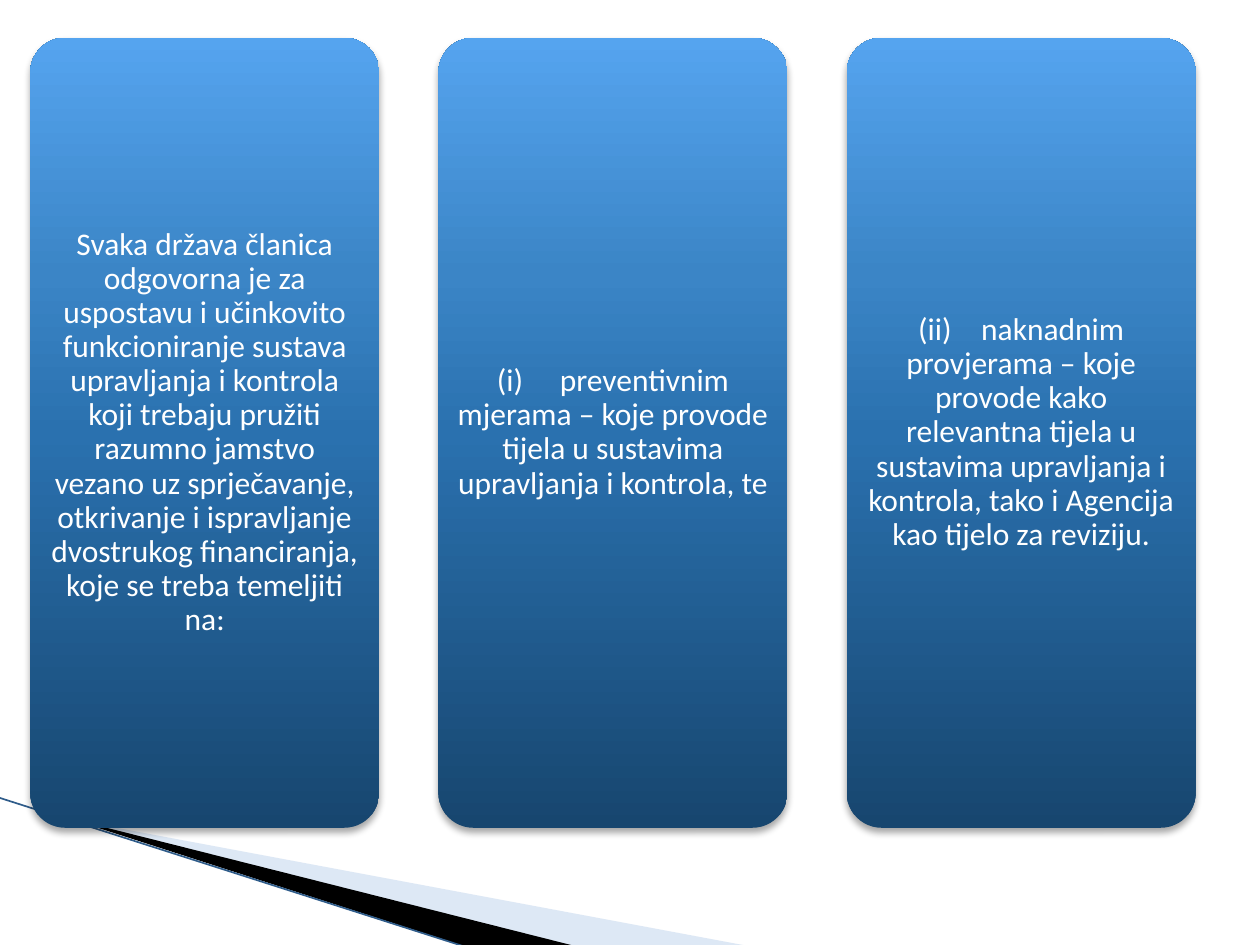
from lxml.etree import SubElement
from pptx import Presentation
from pptx.dml.color import RGBColor
from pptx.enum.shapes import MSO_CONNECTOR, MSO_SHAPE
from pptx.enum.text import MSO_ANCHOR, PP_ALIGN
from pptx.oxml import parse_xml
from pptx.oxml.ns import nsdecls, qn
from pptx.util import Inches, Pt

THEME = {
    "pale": "ABC6E6",
    "pale_alpha": 40,
    "dark": "000000",
    "edge": "2F5C8A",
    "edge_width": Pt(0.95),
    "text": RGBColor.from_string("FFFFFF"),
    "font": "Calibri",
    "size": Pt(18),
    "gradient": [(0, "17466F"), (50, "2A71AF"), (70, "3B85C6"), (100, "55A4EF")],
}
FRAME_FORMAT = {
    "word_wrap": True,
    "vertical_anchor": MSO_ANCHOR.MIDDLE,
    "margin_left": Inches(0.07),
    "margin_right": Inches(0.07),
    "margin_top": Inches(0.07),
    "margin_bottom": Inches(0.07),
}
PARAGRAPH_FORMAT = {"alignment": PP_ALIGN.CENTER, "line_spacing": 0.9}
FONT_FORMAT = {"name": THEME["font"], "size": THEME["size"]}

STATEMENTS = [
    "Svaka država članica odgovorna je za uspostavu i učinkovito funkcioniranje "
    "sustava upravljanja i kontrola koji trebaju pružiti razumno jamstvo vezano uz "
    "sprječavanje, otkrivanje i ispravljanje dvostrukog financiranja, koje se treba "
    "temeljiti na:",
    "(i)\tpreventivnim mjerama – koje provode tijela u sustavima upravljanja i "
    "kontrola, te",
    "(ii)\tnaknadnim provjerama – koje provode kako relevantna tijela u sustavima "
    "upravljanja i kontrola, tako i Agencija kao tijelo za reviziju.",
]
RAYS = [
    (THEME["pale"], THEME["pale_alpha"], [(0.55, 6.5), (5.95, 7.51), (4.56, 7.51)]),
    (THEME["dark"], 100, [(0.53, 6.49), (4.57, 7.51), (3.72, 7.52)]),
]
CARD_LEFT, CARD_TOP, CARD_WIDTH, CARD_HEIGHT = 0.24, 0.3, 2.77, 6.27
CARD_PITCH = 3.24


def apply_format(target, values):
    for name, value in values.items():
        setattr(target, name, value)


presentation = Presentation()
presentation.slide_width = Inches(10)
presentation.slide_height = Inches(7.5)
slide = presentation.slides.add_slide(presentation.slide_layouts[6])

for color, alpha, corners in RAYS:
    points = [(Inches(x), Inches(y)) for x, y in corners]
    builder = slide.shapes.build_freeform(*points[0])
    builder.add_line_segments(points[1:], close=True)
    ray = builder.convert_to_shape()
    ray.shadow.inherit = False
    ray.line.fill.background()
    ray.fill.solid()
    ray.fill.fore_color.rgb = RGBColor.from_string(color)
    ray_color = ray._element.spPr.find(qn("a:solidFill")).find(qn("a:srgbClr"))
    SubElement(ray_color, qn("a:alpha"), val=str(alpha * 1000))

edge = slide.shapes.add_connector(
    MSO_CONNECTOR.STRAIGHT, Inches(-0.01), Inches(6.33), Inches(3.71), Inches(7.52)
)
edge.line.color.rgb = RGBColor.from_string(THEME["edge"])
edge.line.width = THEME["edge_width"]
SubElement(edge._element.spPr, qn("a:effectLst"))

stops = "".join(
    f'<a:gs pos="{position * 1000}"><a:srgbClr val="{color}"/></a:gs>'
    for position, color in THEME["gradient"]
)
gradient_xml = (
    f'<a:gradFill {nsdecls("a")} rotWithShape="1"><a:gsLst>{stops}</a:gsLst>'
    '<a:lin ang="16200000" scaled="0"/></a:gradFill>'
)
shadow_xml = (
    f'<a:effectLst {nsdecls("a")}>'
    f'<a:outerShdw blurRad="{Pt(4)}" dist="{Pt(3)}" dir="5400000" rotWithShape="0">'
    f'<a:srgbClr val="{THEME["dark"]}"><a:alpha val="35000"/></a:srgbClr>'
    "</a:outerShdw></a:effectLst>"
)

for index, statement in enumerate(STATEMENTS):
    card = slide.shapes.add_shape(
        MSO_SHAPE.ROUNDED_RECTANGLE,
        Inches(CARD_LEFT + index * CARD_PITCH),
        Inches(CARD_TOP),
        Inches(CARD_WIDTH),
        Inches(CARD_HEIGHT),
    )
    card.adjustments[0] = 0.1
    card.line.fill.background()
    properties = card._element.spPr
    properties.find(qn("a:prstGeom")).addnext(parse_xml(gradient_xml))
    properties.append(parse_xml(shadow_xml))

    frame = card.text_frame
    apply_format(frame, FRAME_FORMAT)
    frame.text = statement
    paragraph = frame.paragraphs[0]
    apply_format(paragraph, PARAGRAPH_FORMAT)
    font = paragraph.runs[0].font
    apply_format(font, FONT_FORMAT)
    font.color.rgb = THEME["text"]

presentation.save("out.pptx")
